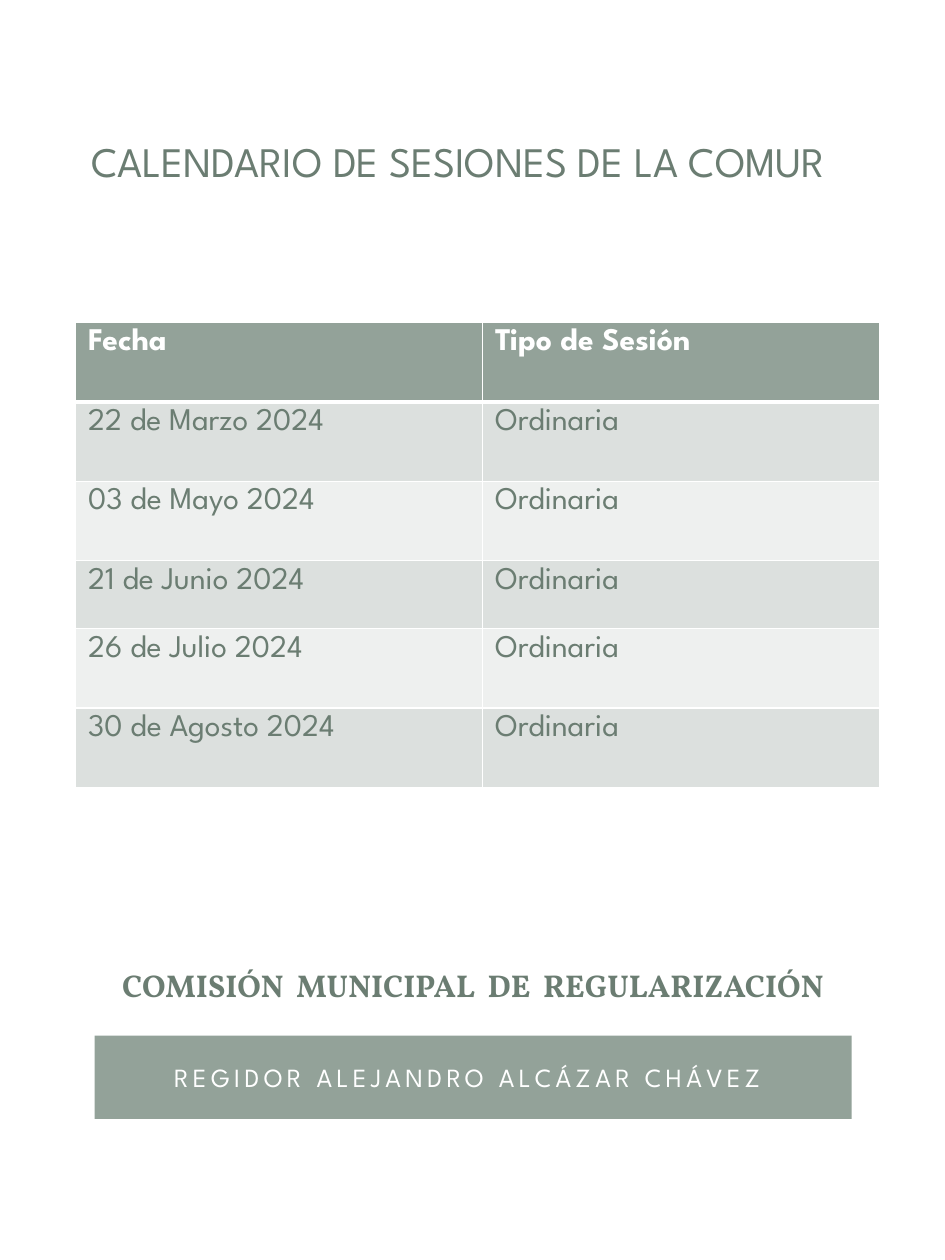
from dataclasses import dataclass

from lxml import etree
from pptx import Presentation
from pptx import util as u
from pptx.dml.color import RGBColor
from pptx.enum import shapes, text
from pptx.oxml.ns import qn

SAGE, DARK_SAGE, WHITE = "93A299", "6B7D72", "FFFFFF"
BANDS = ("DCE0DE", "EEF0EF")
SANS, SERIF = "League Spartan", "Vollkorn"


@dataclass(frozen=True)
class Style:
    size: float
    font: str
    color: str
    bold: bool = False
    spacing: float = 0  # points between letters


@dataclass(frozen=True)
class Area:
    left: float
    top: float
    width: float
    height: float

    def lengths(self) -> tuple:
        return tuple(u.Inches(n) for n in (self.left, self.top, self.width, self.height))


HEADING = Style(24, SANS, DARK_SAGE)
COMMITTEE = Style(18, SERIF, DARK_SAGE, bold=True)
NAME = Style(15, SANS, WHITE, spacing=2.5)
TABLE_HEAD = Style(18, SANS, WHITE, bold=True)
TABLE_BODY = Style(18, SANS, DARK_SAGE)

DATES = ("22 de Marzo 2024", "03 de Mayo 2024", "21 de Junio 2024",
         "26 de Julio 2024", "30 de Agosto 2024")
ROWS = [("Fecha", "Tipo de Sesión")] + [(date, "Ordinaria") for date in DATES]
COLUMN_WIDTHS = (3.23, 3.15)
ROW_HEIGHTS = (0.63, 0.63, 0.63, 0.54, 0.63, 0.63)


def rgb(value: str) -> RGBColor:
    return RGBColor.from_string(value)


def write(frame, words: str, style: Style, align=text.PP_ALIGN.LEFT) -> None:
    para = frame.paragraphs[0]
    para.alignment = align
    span = para.add_run()
    span.text = words
    span.font.size = u.Pt(style.size)
    span.font.name = style.font
    span.font.bold = style.bold
    span.font.color.rgb = rgb(style.color)
    if style.spacing:
        span.font._element.set("spc", str(int(style.spacing * 100)))


def place(box, area: Area, words: str, style: Style, anchor) -> None:
    """Position a box and give it one centred line of text."""
    box.left, box.top, box.width, box.height = area.lengths()
    frame = box.text_frame
    frame.word_wrap = True
    frame.auto_size = text.MSO_AUTO_SIZE.NONE
    frame.vertical_anchor = anchor
    write(frame, words, style, text.PP_ALIGN.CENTER)


def add_borders(cell, bottom: float) -> None:
    properties = cell._tc.get_or_add_tcPr()
    for side, points in (("L", 1), ("R", 1), ("T", 1), ("B", bottom)):
        line = etree.SubElement(properties, qn(f"a:ln{side}"), w=str(int(u.Pt(points))))
        fill = etree.SubElement(line, qn("a:solidFill"))
        etree.SubElement(fill, qn("a:srgbClr"), val=WHITE)


def add_calendar(page, area: Area) -> None:
    table = page.shapes.add_table(len(ROWS), len(COLUMN_WIDTHS), *area.lengths()).table
    for column, width in zip(table.columns, COLUMN_WIDTHS):
        column.width = u.Inches(width)
    for index, (row, height, entries) in enumerate(zip(table.rows, ROW_HEIGHTS, ROWS)):
        row.height = u.Inches(height)
        is_head = index == 0
        for cell, words in zip(row.cells, entries):
            add_borders(cell, bottom=3 if is_head else 1)
            cell.fill.solid()
            cell.fill.fore_color.rgb = rgb(SAGE if is_head else BANDS[(index - 1) % 2])
            write(cell.text_frame, words, TABLE_HEAD if is_head else TABLE_BODY)


def main() -> None:
    deck = Presentation()
    deck.slide_width, deck.slide_height = u.Inches(7.5), u.Inches(10)
    page = deck.slides.add_slide(deck.slide_layouts[5])
    middle, top = text.MSO_ANCHOR.MIDDLE, text.MSO_ANCHOR.TOP

    # Committee title
    place(page.shapes.title, Area(0.75, 7.44, 6.01, 0.76),
          "COMISIÓN  MUNICIPAL  DE  REGULARIZACIÓN", COMMITTEE, middle)

    # Name band
    band_area = Area(0.75, 8.22, 6.01, 0.66)
    band = page.shapes.add_shape(shapes.MSO_SHAPE.RECTANGLE, *band_area.lengths())
    band.shadow.inherit = False
    band.fill.solid()
    band.fill.fore_color.rgb = rgb(SAGE)
    band.line.fill.background()
    place(band, band_area, "REGIDOR ALEJANDRO ALCÁZAR CHÁVEZ ", NAME, middle)

    # Calendar heading and table
    heading_area = Area(0.29, 1.03, 6.69, 0.91)
    heading = page.shapes.add_textbox(*heading_area.lengths())
    place(heading, heading_area, "CALENDARIO DE SESIONES DE LA COMUR", HEADING, top)
    add_calendar(page, Area(0.6, 2.56, sum(COLUMN_WIDTHS), sum(ROW_HEIGHTS)))

    deck.save("out.pptx")


if __name__ == "__main__":
    main()
